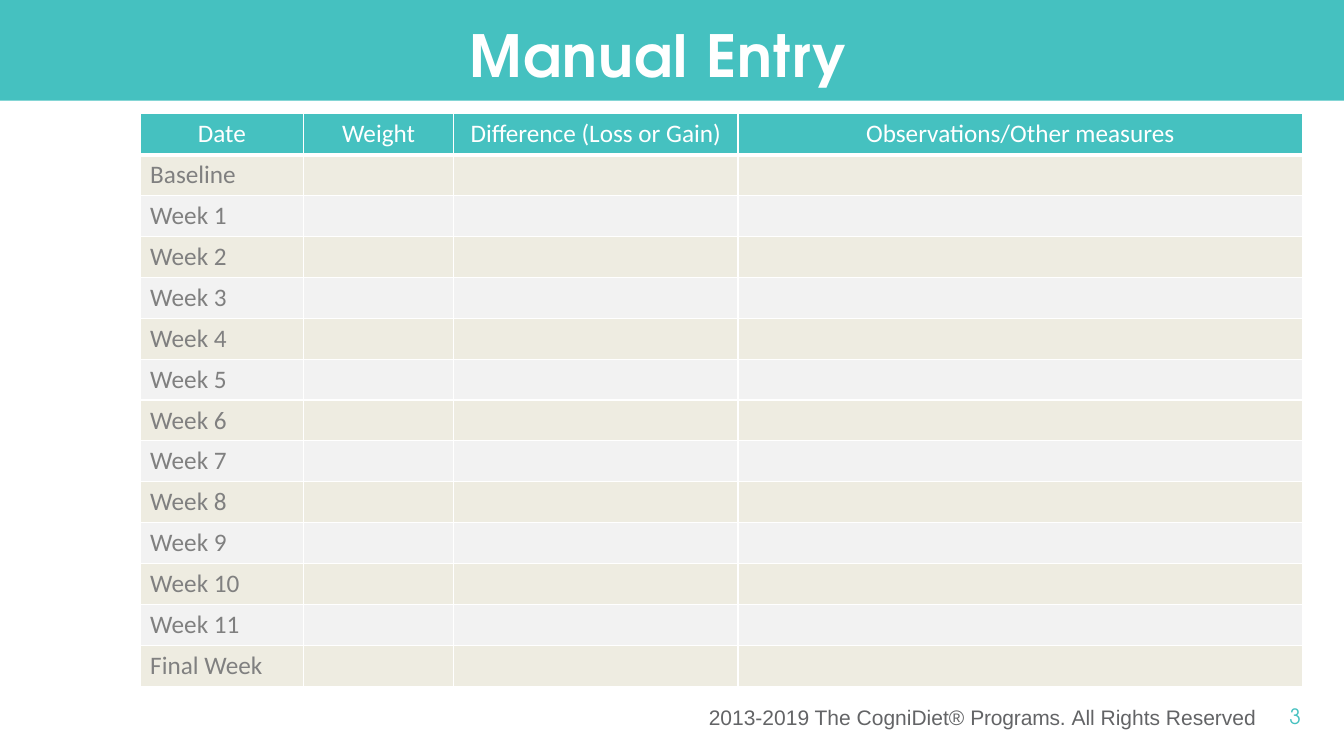
"""Build the Manual Entry slide with its weekly weight table."""
from lxml.etree import SubElement
from pptx import Presentation
from pptx.dml.color import RGBColor
from pptx.enum.shapes import MSO_SHAPE
from pptx.enum.text import MSO_ANCHOR, PP_ALIGN
from pptx.oxml.ns import qn
from pptx.util import Inches, Pt

TEAL, WHITE, GREY = "45C1C0", "FFFFFF", "808080"
HEAD = "TeX Gyre Adventor"


def paint(target, color):
    if hasattr(target, "solid"):
        target.solid()
        target = target.fore_color
    target.rgb = RGBColor.from_string(color)


def write(para, text, size, face, color, bold=False, track=0):
    run = para.add_run()
    run.text = text
    font = run.font
    font.size, font.name, font.bold = Pt(size), face, bold
    paint(font.color, color)
    if track:
        run._r.get_or_add_rPr().set("spc", str(track))


deck = Presentation()
deck.slide_width, deck.slide_height = Inches(13.33), Inches(7.5)
slide = deck.slides.add_slide(deck.slide_layouts[5])
shapes = slide.shapes

band = shapes.add_shape(MSO_SHAPE.RECTANGLE, 0, 0, deck.slide_width, Inches(1))
band.shadow.inherit = False
paint(band.fill, TEAL)
band.line.fill.background()
shapes._spTree.insert(2, band._element)

title = shapes.title
number = shapes.add_textbox(0, 0, 0, 0)
footer = shapes.add_textbox(0, 0, 0, 0)
boxes = [
    (title, (4.63, 0.16, 8.13, 0.72), 0.03, 0.02, 1.1,
     [("Manual Entry", 41.5, HEAD, WHITE, True, 80)]),
    (number, (12.76, 6.95, 0.3, 0.28), 0.03, 0.01, 1.1,
     [("3", 15, HEAD, TEAL)]),
    (footer, (7.02, 6.99, 5.48, 0.27), 0.01, 0, 0,
     [("2013-2019 The CogniDiet® ", 15, "Arial", "636466"),
      ("Programs. ", 15, "Arial", "636466", False, -10),
      ("All Rights Reserved", 15, "Arial", "636466")]),
]
for box, place, left, top, above, runs in boxes:
    box.left, box.top, box.width, box.height = map(Inches, place)
    frame = box.text_frame
    frame.word_wrap = True
    frame.vertical_anchor = MSO_ANCHOR.TOP
    frame.margin_left = Inches(left)
    frame.margin_top = Inches(top) + Pt(above)
    frame.margin_right = frame.margin_bottom = 0
    para = frame.paragraphs[0]
    para.alignment = PP_ALIGN.LEFT
    for run in runs:
        write(para, *run)

heads = ["Date", "Weight", "Difference (Loss or Gain)", "Observations/Other measures"]
weeks = ["Baseline", *(f"Week {n}" for n in range(1, 12)), "Final Week"]
rows = [heads] + [[week, "", "", ""] for week in weeks]
widths = [1.62, 1.49, 2.82, 5.6]

grid = shapes.add_table(len(rows), len(widths), Inches(1.39), Inches(1.13),
                        Inches(sum(widths)), Inches(5.68)).table
for col, width in zip(grid.columns, widths):
    col.width = Inches(width)

for r, texts in enumerate(rows):
    top = r == 0
    fill = TEAL if top else ("F2F2F2", "EEECE1")[r % 2]
    for c, text in enumerate(texts):
        cell = grid.cell(r, c)
        props = cell._tc.get_or_add_tcPr()
        for side in "LRTB":
            width = Pt(3 if top and side == "B" else 1)
            line = SubElement(props, qn(f"a:ln{side}"), w=str(width))
            solid = SubElement(line, qn("a:solidFill"))
            SubElement(solid, qn("a:srgbClr"), val=WHITE)
        paint(cell.fill, fill)
        para = cell.text_frame.paragraphs[0]
        para.alignment = PP_ALIGN.CENTER if top else PP_ALIGN.LEFT
        if text:
            write(para, text, 18, "Calibri", WHITE if top else GREY)

deck.save("out.pptx")
